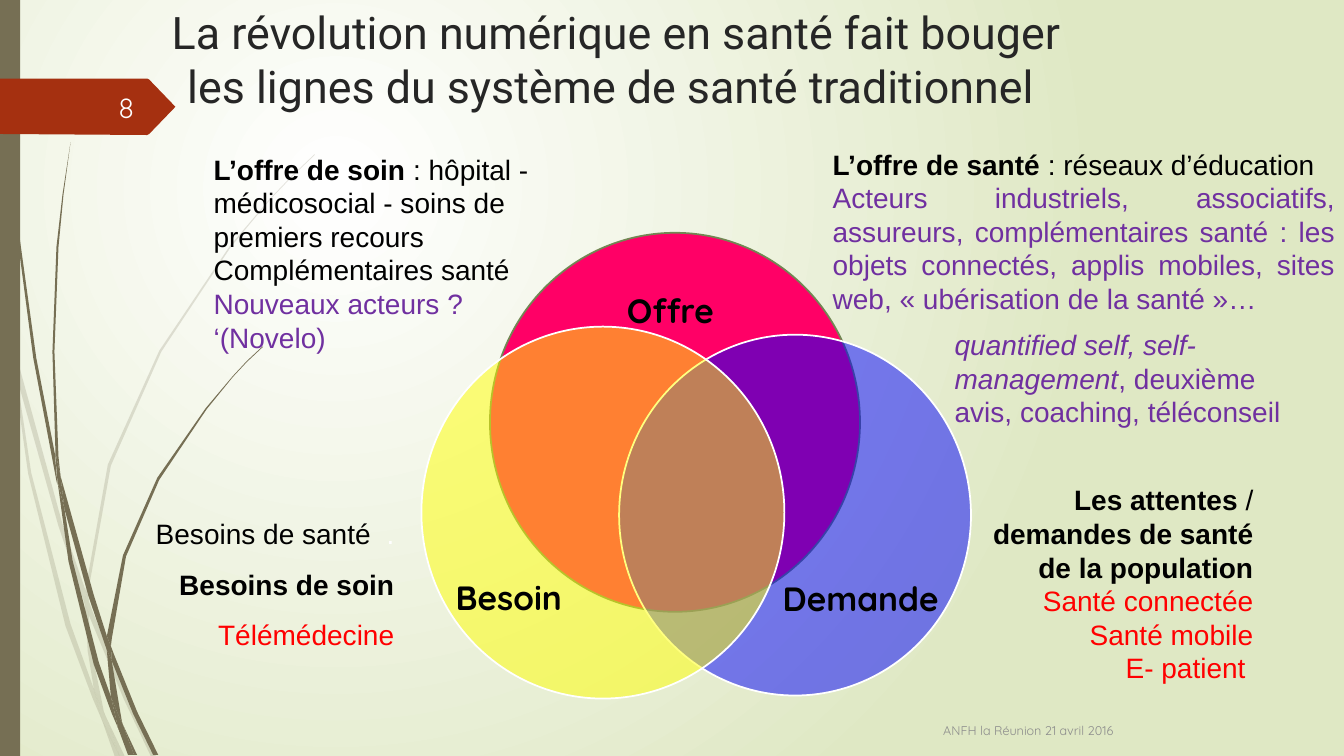
from lxml.etree import SubElement
from pptx import Presentation
from pptx.dml.color import RGBColor
from pptx.enum.shapes import MSO_SHAPE
from pptx.enum.text import MSO_ANCHOR, PP_ALIGN
from pptx.oxml.ns import qn
from pptx.util import Inches, Pt

BLACK = RGBColor(0x00, 0x00, 0x00)
WHITE = RGBColor(0xFF, 0xFF, 0xFF)
RED = RGBColor(0xFF, 0x00, 0x00)
PURPLE = RGBColor(0x70, 0x30, 0xA0)
PALE_GREEN = RGBColor(0xDF, 0xE8, 0xC4)
BROWN = RGBColor(0x76, 0x6F, 0x54)
RUST = RGBColor(0xA5, 0x30, 0x10)
DARK_GREY = RGBColor(0x26, 0x26, 0x26)
GREY = RGBColor(0x8C, 0x8C, 0x8C)
OFF_WHITE = RGBColor(0xFE, 0xFF, 0xFF)
PINK = RGBColor(0xFF, 0x00, 0x66)
BLUE = RGBColor(0x00, 0x00, 0xFF)
YELLOW = RGBColor(0xFF, 0xFF, 0x00)
OLIVE = RGBColor(0x72, 0x86, 0x53)

# Outlines of the blades of grass, in inches
PALE_BLADES = [
    [(0.11, 3.5), (0.09, 3.22), (0, 2.82), (0, 2.99), (0.1, 3.44)],
    [(0.58, 5.22), (0.84, 5.99), (0.85, 5.86), (0.62, 5.2), (0.14, 3.45), (0.17, 3.76)],
    [(0.92, 6.07), (0.88, 5.96), (0.88, 6.1), (1.23, 6.94), (1.5, 7.51), (1.55, 7.51), (1.27, 6.92)],
    [(1.19, 7.51), (1.24, 7.51), (1.05, 7.11)],
    [(0.93, 6.83), (0.7, 6.19), (0.31, 4.69), (0.17, 3.76), (0.11, 3.5), (0.28, 4.7),
     (0.65, 6.21), (0.92, 6.93), (1.01, 7.14), (0.99, 7.07)],
    [(0.84, 5.99), (0.87, 6.46), (0.93, 6.83), (0.96, 6.92), (1.05, 7.11), (1.03, 7.06),
     (0.91, 6.46), (0.88, 6.1), (0.88, 6.08)],
    [(0.88, 5.84), (1.1, 4.62), (1.6, 3.49), (2.29, 2.45), (2.68, 1.98), (2.9, 1.75),
     (3.12, 1.54), (3.12, 1.53), (2.89, 1.75), (2.68, 1.97), (2.28, 2.44), (1.58, 3.48),
     (1.07, 4.61), (0.85, 5.84), (0.85, 5.86), (0.88, 5.96)],
    [(1.01, 7.14), (1.14, 7.51), (1.19, 7.51)],
    [(0.88, 6.08), (0.88, 6.1), (0.88, 5.96), (0.85, 5.86), (0.84, 5.99)],
    [(0.96, 6.92), (0.93, 6.83), (0.99, 7.07), (1.01, 7.14), (1.19, 7.51), (1.05, 7.11)],
]
DARK_BLADES = [
    [(0.07, 1.1), (0.17, 2.33), (0.33, 3.55), (0.56, 4.77), (0.57, 4.81), (0.55, 4.57),
     (0.55, 4.53), (0.36, 3.55), (0.19, 2.32), (0.08, 1.09), (0.05, 0.48), (0.04, 0),
     (0.03, 0), (0.04, 0.48)],
    [(0.88, 5.92), (1.06, 6.45), (1.06, 6.31), (0.93, 5.9), (0.6, 4.72), (0.64, 5.05)],
    [(1.13, 6.49), (1.1, 6.41), (1.11, 6.56), (1.32, 7.08), (1.52, 7.49), (1.57, 7.49), (1.36, 7.06)],
    [(1.1, 6.91), (0.98, 6.57), (0.72, 5.56), (0.64, 5.05), (0.57, 4.77), (0.68, 5.57),
     (0.93, 6.59), (1.11, 7.08), (1.17, 7.22), (1.16, 7.17)],
    [(0.6, 4.72), (0.58, 4.53), (0.54, 3.49), (0.58, 2.45), (0.63, 1.93), (0.7, 1.41),
     (0.62, 1.93), (0.56, 2.45), (0.52, 3.49), (0.55, 4.49)],
    [(1.33, 7.49), (1.36, 7.49), (1.22, 7.19)],
    [(0.57, 4.77), (0.64, 5.05), (0.6, 4.72), (0.55, 4.49), (0.55, 4.53)],
    [(1.11, 6.33), (1.25, 5.52), (1.58, 4.76), (2.05, 4.06), (2.31, 3.74), (2.45, 3.59),
     (2.61, 3.44), (2.6, 3.44), (2.45, 3.58), (2.31, 3.73), (2.04, 4.05), (1.56, 4.74),
     (1.22, 5.51), (1.06, 6.31), (1.1, 6.41)],
    [(1.17, 7.22), (1.27, 7.49), (1.31, 7.49)],
    [(1.06, 6.45), (1.1, 6.91), (1.16, 7.06), (1.22, 7.19), (1.21, 7.16), (1.11, 6.56), (1.09, 6.51)],
    [(1.06, 6.45), (1.09, 6.51), (1.11, 6.56), (1.1, 6.41), (1.06, 6.31)],
    [(1.16, 7.06), (1.1, 6.91), (1.16, 7.17), (1.17, 7.22), (1.3, 7.49), (1.33, 7.49), (1.22, 7.19)],
]
TAG = [(1.74, 1.06), (1.48, 1.33), (1.46, 1.34), (0, 1.33), (0, 0.78), (1.46, 0.78), (1.48, 0.79)]


def set_background(page):
    fill = page.background.fill
    fill.gradient()
    for stop, color, position in zip(fill.gradient_stops, (WHITE, PALE_GREEN), (0, 1)):
        stop.color.rgb = color
        stop.position = position
    gradient = page.element.find(".//" + qn("a:gradFill"))
    gradient.remove(gradient.find(qn("a:lin")))
    circle = SubElement(gradient, qn("a:path"), path="circle")
    SubElement(circle, qn("a:fillToRect"), l="50000", t="50000", r="100000", b="100000")


def paint(shape, color, opacity=100, line=None):
    shape.shadow.inherit = False
    shape.fill.solid()
    shape.fill.fore_color.rgb = color
    if opacity < 100:
        tint = shape.element.spPr.find(".//" + qn("a:srgbClr"))
        SubElement(tint, qn("a:alpha"), val=str(opacity * 1000))
    if line is None:
        shape.line.fill.background()
    else:
        shape.line.color.rgb = line
        shape.line.width = Pt(1.25)


def add_preset(page, kind, area, color, opacity=100, line=None):
    shape = page.shapes.add_shape(kind, *map(Inches, area))
    paint(shape, color, opacity, line)


def add_outline(page, points, color, opacity=100):
    corners = [(Inches(x), Inches(y)) for x, y in points]
    builder = page.shapes.build_freeform(*corners[0])
    builder.add_line_segments(corners[1:], close=True)
    paint(builder.convert_to_shape(), color, opacity)


def add_text(page, area, paragraphs, size=20, font="Arial", align=PP_ALIGN.LEFT,
             anchor=MSO_ANCHOR.TOP, spacing=1.0, inset=0.1, hanging=0):
    """Each paragraph is a list of spans: (text, colour, style), style holding b or i."""
    box = page.shapes.add_textbox(*map(Inches, area))
    frame = box.text_frame
    frame.word_wrap = True
    frame.vertical_anchor = anchor
    frame.margin_left = frame.margin_right = Inches(inset)
    frame.margin_top = frame.margin_bottom = Inches(inset / 2)
    for index, spans in enumerate(paragraphs):
        para = frame.add_paragraph() if index else frame.paragraphs[0]
        para.alignment = align
        para.line_spacing = spacing
        if hanging:
            properties = para._p.get_or_add_pPr()
            properties.set("marL", str(Inches(hanging)))
            properties.set("indent", str(-Inches(hanging)))
        for text, color, style in spans:
            span = para.add_run()
            span.text = text
            span.font.name = font
            span.font.size = Pt(size)
            span.font.color.rgb = color
            span.font.bold = "b" in style
            span.font.italic = "i" in style
    return box


def add_venn(page):
    add_preset(page, MSO_SHAPE.OVAL, (4.86, 2.31, 3.67, 3.76), PINK, line=OLIVE)
    add_preset(page, MSO_SHAPE.OVAL, (6.14, 3.32, 3.49, 3.58), BLUE, 50, WHITE)
    add_preset(page, MSO_SHAPE.OVAL, (4.18, 3.24, 3.6, 3.69), YELLOW, 50, WHITE)
    for label, left, middle, width, align in (
            ("Offre ", 5.35, 3.1, 2.69, PP_ALIGN.CENTER),
            ("Demande", 7.21, 5.96, 2.1, PP_ALIGN.RIGHT),
            ("Besoin", 4.52, 5.95, 2.16, PP_ALIGN.LEFT)):
        add_text(page, (left, middle - 0.25, width, 0.5), [[(label, BLACK, "b")]], 24,
                 "Quicksand", align, MSO_ANCHOR.MIDDLE, 0.9, 0)


def add_comments(page):
    # Needs, lower left
    add_text(page, (1.31, 4.91, 2.7, 1.62), [
        [("Besoins de santé  ", BLACK, ""), (".", WHITE, "")],
        [("Besoins de soin", BLACK, "b")],
        [("Télémédecine", RED, "")]], align=PP_ALIGN.RIGHT, spacing=1.5)
    # Care on offer, upper left
    add_text(page, (2.02, 1.46, 3.6, 2.46), [
        [("L’offre de soin", BLACK, "b"),
         (" : hôpital - médicosocial - soins de premiers recours", BLACK, "")],
        [("Complémentaires santé", BLACK, "")],
        [("Nouveaux acteurs ?", PURPLE, "")],
        [("‘(Novelo)", PURPLE, "")]])
    # Demand, lower right
    add_text(page, (9.22, 4.74, 3.31, 2.12), [
        [("Les attentes ", BLACK, "b"), ("/ ", BLACK, ""),
         ("demandes de santé ", BLACK, "b")],
        [("de la population", BLACK, "b")],
        *([(text, RED, "")] for text in ("Santé connectée", "Santé mobile", "E- patient "))],
        align=PP_ALIGN.RIGHT, hanging=0.5)
    # Health on offer, upper right
    offer = add_text(page, (8.16, 1.41, 5.18, 1.78), [
        [("L’offre de santé", BLACK, "b"), (" : réseaux d’éducation", BLACK, "")],
        [("Acteurs industriels, associatifs, assureurs, complémentaires santé : les "
          "objets connectés, applis mobiles, sites web, « ubérisation de la santé »… ",
          PURPLE, "")]])
    offer.text_frame.paragraphs[1].alignment = PP_ALIGN.JUSTIFY
    add_text(page, (9.37, 3.2, 3.56, 1.11), [
        [("quantified self, self-management", PURPLE, "i"),
         (", deuxième avis, coaching, téléconseil", PURPLE, "")]])


def main():
    deck = Presentation()
    deck.slide_width, deck.slide_height = Inches(13.33), Inches(7.5)
    page = deck.slides.add_slide(deck.slide_layouts[6])
    # Backdrop
    set_background(page)
    for blades, opacity in ((PALE_BLADES, 20), (DARK_BLADES, 100)):
        for blade in blades:
            add_outline(page, blade, BROWN, opacity)
    add_preset(page, MSO_SHAPE.RECTANGLE, (0, 0, 0.2, 7.5), BROWN)
    add_outline(page, TAG, RUST)
    # Title and content
    add_text(page, (1.48, 0, 9.27, 1.25), [
        [("La révolution numérique en santé fait bouger les lignes du système de santé "
          "traditionnel ", DARK_GREY, "")]], 32, "Roboto", PP_ALIGN.CENTER)
    add_venn(page)
    add_comments(page)
    # Footer and page number
    for area, text, size, color in (
            ((2.81, 7.05, 8.33, 0.4), "ANFH la Réunion 21 avril 2016", 9, GREY),
            ((0.58, 0.86, 0.85, 0.4), "8", 20, OFF_WHITE)):
        add_text(page, area, [[(text, color, "")]], size, "Quicksand",
                 PP_ALIGN.RIGHT, MSO_ANCHOR.MIDDLE)
    deck.save("out.pptx")


if __name__ == "__main__":
    main()
